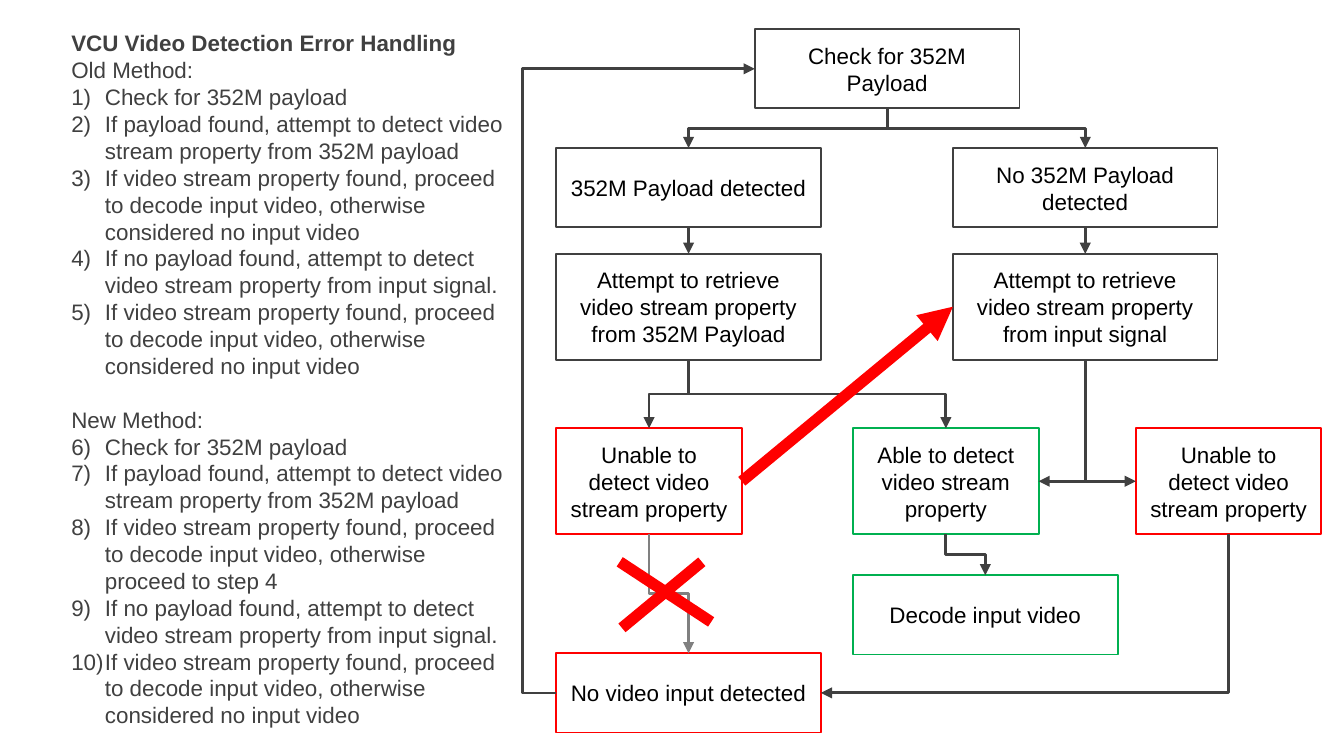
from pptx import Presentation
from pptx.dml.color import RGBColor
from pptx.enum import shapes, text
from pptx.oxml import ns
from pptx.util import Pt
from lxml import etree

DARK = RGBColor(0x40, 0x40, 0x40)
GRAY = RGBColor(0x80, 0x80, 0x80)
BLACK = RGBColor(0, 0, 0)
RED = RGBColor(0xFF, 0, 0)
GREEN = RGBColor(0, 0xB0, 0x50)
TOP, LEFT, BOTTOM, RIGHT = range(4)
WIDE, SLIM = 141.8, 99.4
LOW, TALL = 42.5, 56.7

FIND = "If payload found, attempt to detect video stream property from 352M payload"
SIGNAL = "If no payload found, attempt to detect video stream property from input signal."
PROCEED = "If video stream property found, proceed to decode input video, otherwise "
NONE = PROCEED + "considered no input video"
CHECK = "Check for 352M payload"
UNABLE = "Unable to detect video stream property"
LISTS = [
    ("Old Method:", 1, [CHECK, FIND, NONE, SIGNAL, NONE]),
    ("New Method:", 6, [CHECK, FIND, PROCEED + "proceed to step 4", SIGNAL, NONE]),
]


def put(item, vals):
    for name, val in vals.items():
        setattr(item, name, val)


def add(node, tag, **vals):
    return etree.SubElement(node, ns.qn(tag), **vals)


def site(box, side):
    mid, half = box.left + box.width // 2, box.top + box.height // 2
    return [(mid, box.top), (box.left, half),
            (mid, box.top + box.height), (box.left + box.width, half)][side]


class Chart:
    font = {"name": "Arial", "size": Pt(12)}
    frame = {"word_wrap": True, "auto_size": text.MSO_AUTO_SIZE.NONE}

    def __init__(self, slide):
        self.slide = slide

    def label(self, para, words, color, bold=False):
        run = para.add_run()
        run.text = words
        put(run.font, {**self.font, "bold": bold})
        run.font.color.rgb = color

    def hold(self, shape, x, y, w, h, **vals):
        put(shape, {"left": Pt(x), "top": Pt(y), "width": Pt(w), "height": Pt(h)})
        put(shape.text_frame, {**self.frame, "vertical_anchor": text.MSO_ANCHOR.TOP,
                               "margin_left": Pt(7.2), "margin_right": Pt(7.2), **vals})
        return shape.text_frame

    def title(self, words, *area):
        frame = self.hold(self.slide.shapes.title, *area,
                          margin_top=Pt(3.6), margin_bottom=0)
        para = frame.paragraphs[0]
        para.alignment = text.PP_ALIGN.LEFT
        self.label(para, words, DARK, True)

    def body(self, lists, *area):
        frame = self.hold(self.slide.placeholders[1], *area, margin_top=0)
        for head, start, items in lists:
            first = start == 1
            para = frame.paragraphs[0] if first else frame.add_paragraph()
            self.line(para, head, 0 if first else 14.4)
            for item in items:
                self.line(frame.add_paragraph(), item, 0, start)

    def line(self, para, words, gap, start=None):
        prop = para._p.get_or_add_pPr()
        dent = Pt(18) if start else 0
        prop.set("marL", str(dent))
        prop.set("indent", str(-dent))
        if start:
            add(prop, "a:buFont", typeface="+mj-lt")
            add(prop, "a:buAutoNum", type="arabicParenR", startAt=str(start))
        else:
            add(prop, "a:buNone")
        put(para, {"space_before": Pt(gap), "alignment": text.PP_ALIGN.LEFT})
        self.label(para, words, DARK)

    def box(self, words, x, y, w, h, color=DARK):
        shape = self.slide.shapes.add_shape(
            shapes.MSO_SHAPE.RECTANGLE, Pt(x), Pt(y), Pt(w), Pt(h))
        shape.shadow.inherit = False
        shape.fill.background()
        shape.line.color.rgb = color
        shape.line.width = Pt(1)
        put(shape.text_frame, {**self.frame, "vertical_anchor": text.MSO_ANCHOR.MIDDLE})
        para = shape.text_frame.paragraphs[0]
        para.alignment = text.PP_ALIGN.CENTER
        self.label(para, words, BLACK)
        return shape

    def link(self, kind, ends, color, width, arrow=True):
        link = self.slide.shapes.add_connector(kind, *ends)
        link.line.color.rgb = color
        link.line.width = Pt(width)
        if arrow:
            add(link.line._get_or_add_ln(), "a:tailEnd", type="triangle")
        add(link.element.spPr, "a:effectLst")
        return link

    def join(self, start, out, end, into, color=DARK, width=1.5):
        ends = site(start, out) + site(end, into)
        link = self.link(shapes.MSO_CONNECTOR.STRAIGHT, ends, color, width)
        link.begin_connect(start, out)
        link.end_connect(end, into)

    def slash(self, *ends):
        self.link(shapes.MSO_CONNECTOR.STRAIGHT, map(Pt, ends), RED, 6, False)

    def drop(self, start, end, into=TOP, color=DARK):
        (x, y), (far, low) = site(start, BOTTOM), site(end, into)
        w, h = low - y, abs(far - x)
        left, top = (x + far - w) // 2, (y + low - h) // 2
        link = self.link(shapes.MSO_CONNECTOR.ELBOW,
                         (left, top, left + w, top + h), color, 1.5)
        prop = link.element.spPr
        prop.xfrm.set("rot", str((90 if far < x else 270) * 60000))
        if far > x:
            prop.xfrm.set("flipH", "1")
        if into != TOP:
            prop.find(ns.qn("a:prstGeom")).set("prst", "bentConnector2")

    def back(self, start, end, reach):
        (x, y), (far, high) = site(start, LEFT), site(end, LEFT)
        link = self.link(shapes.MSO_CONNECTOR.ELBOW, (x, high, far, y), DARK, 1.5)
        prop = link.element.spPr
        prop.xfrm.set("rot", str(180 * 60000))
        prop.xfrm.set("flipH", "1")
        ratio = round(-Pt(reach) / (far - x) * 100000)
        vals = prop.find(ns.qn("a:prstGeom")).find(ns.qn("a:avLst"))
        add(vals, "a:gd", name="adj1", fmla=f"val {ratio}")


def main():
    deck = Presentation()
    put(deck, {"slide_width": Pt(720), "slide_height": Pt(405)})
    chart = Chart(deck.slides.add_slide(deck.slide_layouts[1]))
    chart.title("VCU Video Detection Error Handling", 31, 12.2, 249, 18)
    chart.body(LISTS, 31, 30.2, 249, 370)

    check = chart.box("Check for 352M Payload", 404.4, 15.6, WIDE, LOW)
    found = chart.box("352M Payload detected", 298, 79.3, WIDE, LOW)
    lost = chart.box("No 352M Payload detected", 510.5, 79.3, WIDE, LOW)
    load = chart.box("Attempt to retrieve video stream property from 352M Payload",
                     298, 136, WIDE, TALL)
    signal = chart.box("Attempt to retrieve video stream property from input signal",
                       510.5, 136, WIDE, TALL)
    able = chart.box("Able to detect video stream property",
                     457, 229.5, SLIM, TALL, GREEN)
    fail = chart.box(UNABLE, 298, 229.5, SLIM, TALL, RED)
    stop = chart.box(UNABLE, 608.5, 229.5, SLIM, TALL, RED)
    empty = chart.box("No video input detected", 298, 350, WIDE, LOW, RED)
    decode = chart.box("Decode input video", 457, 308.2, WIDE, LOW, GREEN)

    for start, end in [(check, found), (check, lost), (load, fail),
                       (load, able), (able, decode)]:
        chart.drop(start, end)
    chart.drop(fail, empty, color=GRAY)
    for start, end, into in [(signal, able, RIGHT), (signal, stop, LEFT),
                             (stop, empty, RIGHT)]:
        chart.drop(start, end, into)
    chart.back(empty, check, 18)
    for start, end in [(found, load), (lost, signal)]:
        chart.join(start, BOTTOM, end, TOP)
    chart.join(fail, RIGHT, signal, LEFT, RED, 6)
    chart.slash(332, 301, 381, 333.2)
    chart.slash(376, 301, 333.2, 336.4)
    deck.save("out.pptx")


if __name__ == "__main__":
    main()
